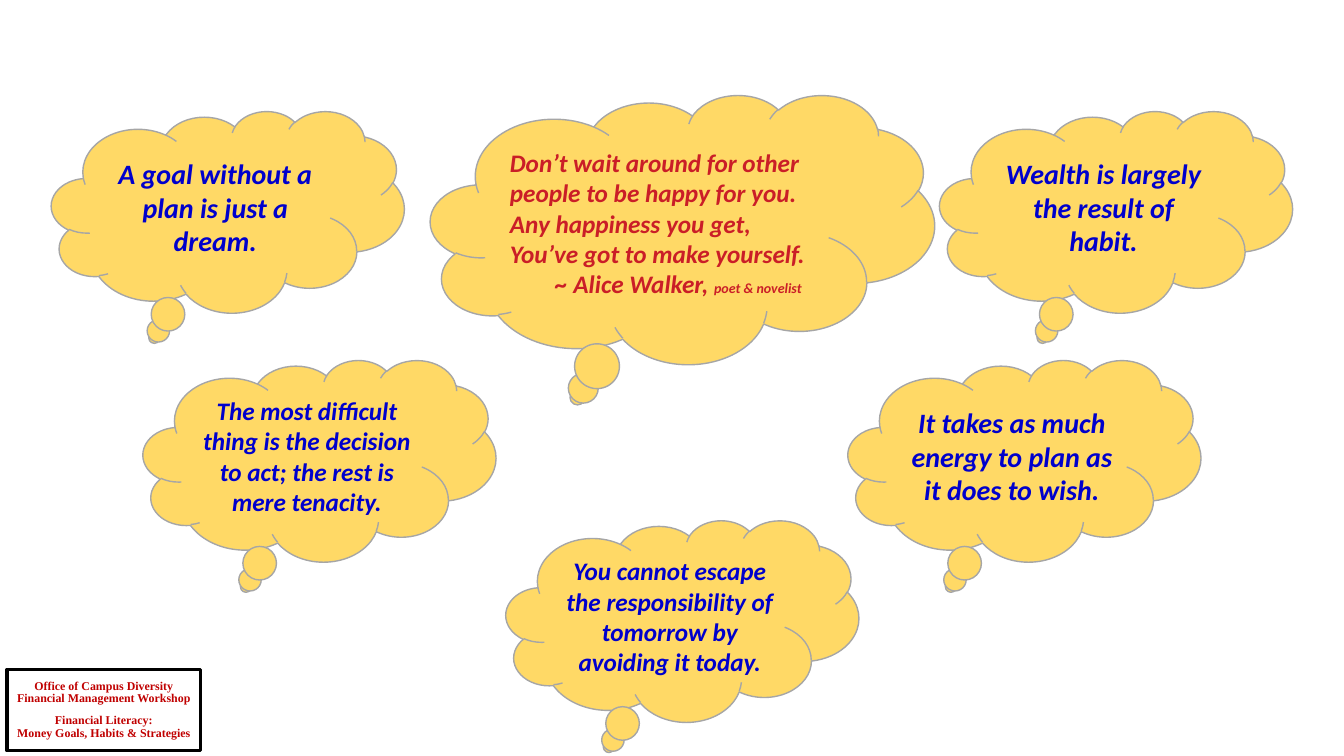
from pptx import Presentation
from pptx.dml.color import RGBColor
from pptx.enum.shapes import MSO_SHAPE
from pptx.enum.text import MSO_ANCHOR, PP_ALIGN
from pptx.util import Inches, Pt

CLOUD, RECT = MSO_SHAPE.CLOUD_CALLOUT, MSO_SHAPE.RECTANGLE
LEFT, CENTER = PP_ALIGN.LEFT, PP_ALIGN.CENTER
MIDDLE = MSO_ANCHOR.MIDDLE

GOLD = RGBColor(0xFF, 0xD9, 0x66)
GREY = RGBColor(0xA6, 0xA6, 0xA6)
BLUE = RGBColor(0x00, 0x00, 0xCC)
RED = RGBColor(0xCA, 0x1E, 0x27)
DARK_RED = RGBColor(0xC0, 0x00, 0x00)
BLACK = RGBColor(0x00, 0x00, 0x00)

# Cloud sizes and margins, in percent of the slide
CLOUD_W, CLOUD_H = 26.25, 26.67
BIG_W, BIG_H = 37.5, 35.6
OUTER, INNER = 3.83, 10.65
TOP_ROW, MID_ROW, LOW_ROW = 14.67, 47.6, 68.8


def mirrored(margin):
    """Left edge of a cloud that keeps this margin on the right."""
    return 100 - margin - CLOUD_W


class QuoteSlide:
    def __init__(self, prs):
        self.width, self.height = prs.slide_width, prs.slide_height
        self.slide = prs.slides.add_slide(prs.slide_layouts[6])

    def shape(self, kind, x, y, w, h, line, weight, fill=None):
        """Add a shape placed in percent of the slide; return its text frame."""
        sp = self.slide.shapes.add_shape(
            kind, int(self.width * x / 100), int(self.height * y / 100),
            int(self.width * w / 100), int(self.height * h / 100))
        sp.shadow.inherit = False
        if fill is None:
            sp.fill.background()
        else:
            sp.fill.solid()
            sp.fill.fore_color.rgb = fill
        sp.line.color.rgb = line
        sp.line.width = Pt(weight)
        tf = sp.text_frame
        tf.word_wrap = True
        tf.vertical_anchor = MIDDLE
        return tf

    def set_text(self, tf, lines, font, size, color, align=CENTER, italic=False):
        tf.text = "\n".join(lines)
        for p in tf.paragraphs:
            p.alignment = align
            for r in p.runs:
                self.style(r, font, size, color, italic)

    def style(self, r, font, size, color, italic):
        r.font.name, r.font.size = font, Pt(size)
        r.font.bold, r.font.italic = True, italic
        r.font.color.rgb = color

    def cloud(self, x, y, lines, size, color=BLUE, align=CENTER,
              w=CLOUD_W, h=CLOUD_H):
        tf = self.shape(CLOUD, x, y, w, h, GREY, 1, GOLD)
        self.set_text(tf, lines, "Calibri", size, color, align, italic=True)
        return tf

    def label(self, x, y, w, h, lines, gap_before):
        tf = self.shape(RECT, x, y, w, h, BLACK, 2.25)
        tf.margin_left = tf.margin_right = Inches(0.05)
        self.set_text(tf, lines, "Times New Roman", 8.5, DARK_RED)
        for p in tf.paragraphs:
            p.line_spacing = 0.9
        tf.paragraphs[gap_before].space_before = Pt(6.5)


def main():
    prs = Presentation()
    prs.slide_width, prs.slide_height = Inches(13.33), Inches(7.5)
    s = QuoteSlide(prs)

    # Workshop label
    s.label(0.53, 88.53, 14.4, 10.8,
            ["Office of Campus Diversity", "Financial Management Workshop",
             "Financial Literacy:", "Money Goals, Habits & Strategies"],
            gap_before=2)

    # Short quotes
    for x, y, quote, size in (
        (OUTER, TOP_ROW, "A goal without a plan is just a dream.", 20),
        (INNER, MID_ROW, "The most difficult thing is the decision to act; "
                         "the rest is mere tenacity.", 18),
        (mirrored(OUTER), TOP_ROW, "Wealth is largely the result of habit.", 20),
        (mirrored(INNER), MID_ROW,
         "It takes as much energy to plan as it does to wish.", 20),
        (37.65, LOW_ROW, "You cannot escape the responsibility of tomorrow "
                         "by avoiding it today.", 18),
    ):
        s.cloud(x, y, [quote], size)

    # Main quote with its attribution
    tf = s.cloud(32.03, 12.53,
                 ["Don’t wait around for other people to be happy for you.",
                  "Any happiness you get,", "You’ve got to make yourself.",
                  "~ Alice Walker, "],
                 18, RED, LEFT, BIG_W, BIG_H)
    p = tf.paragraphs[-1]
    p._p.get_or_add_pPr().set("marL", str(Inches(0.45)))
    r = p.add_run()
    r.text = "poet & novelist"
    s.style(r, "Calibri", 10, RED, True)

    prs.save("out.pptx")


if __name__ == "__main__":
    main()
